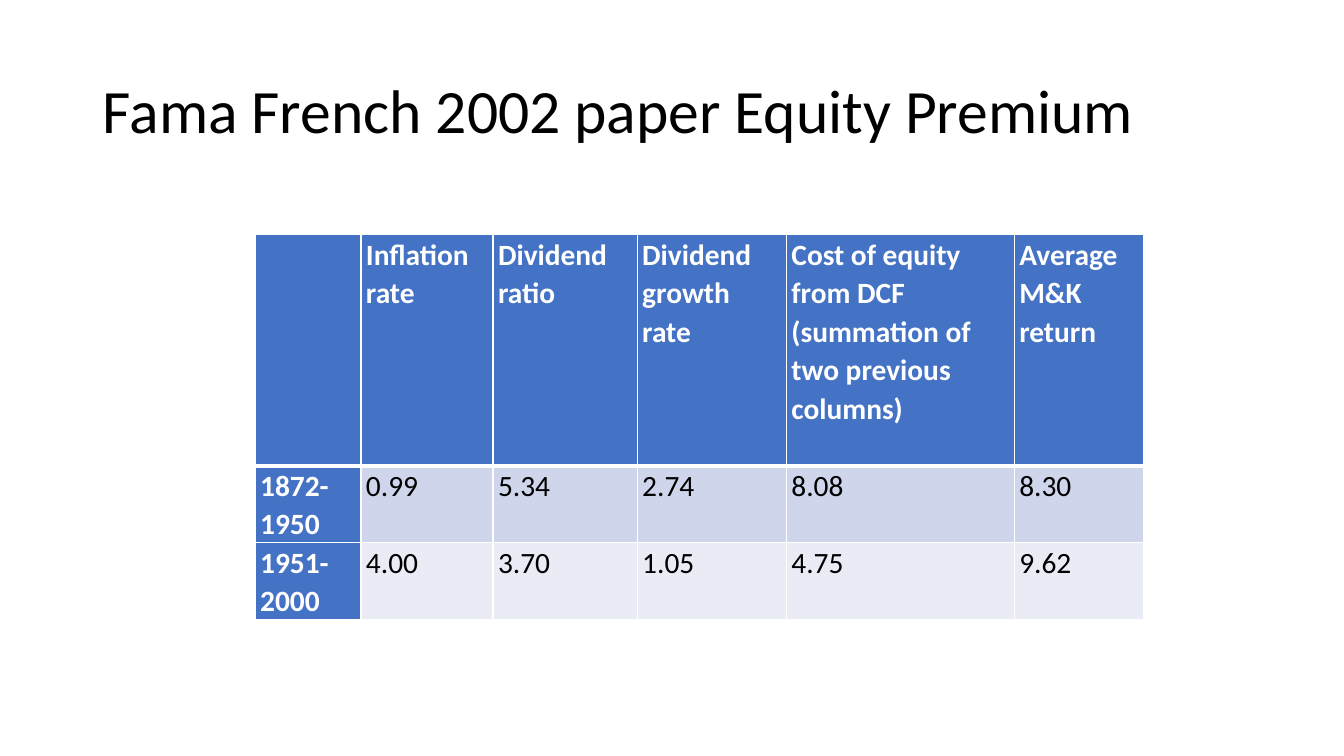
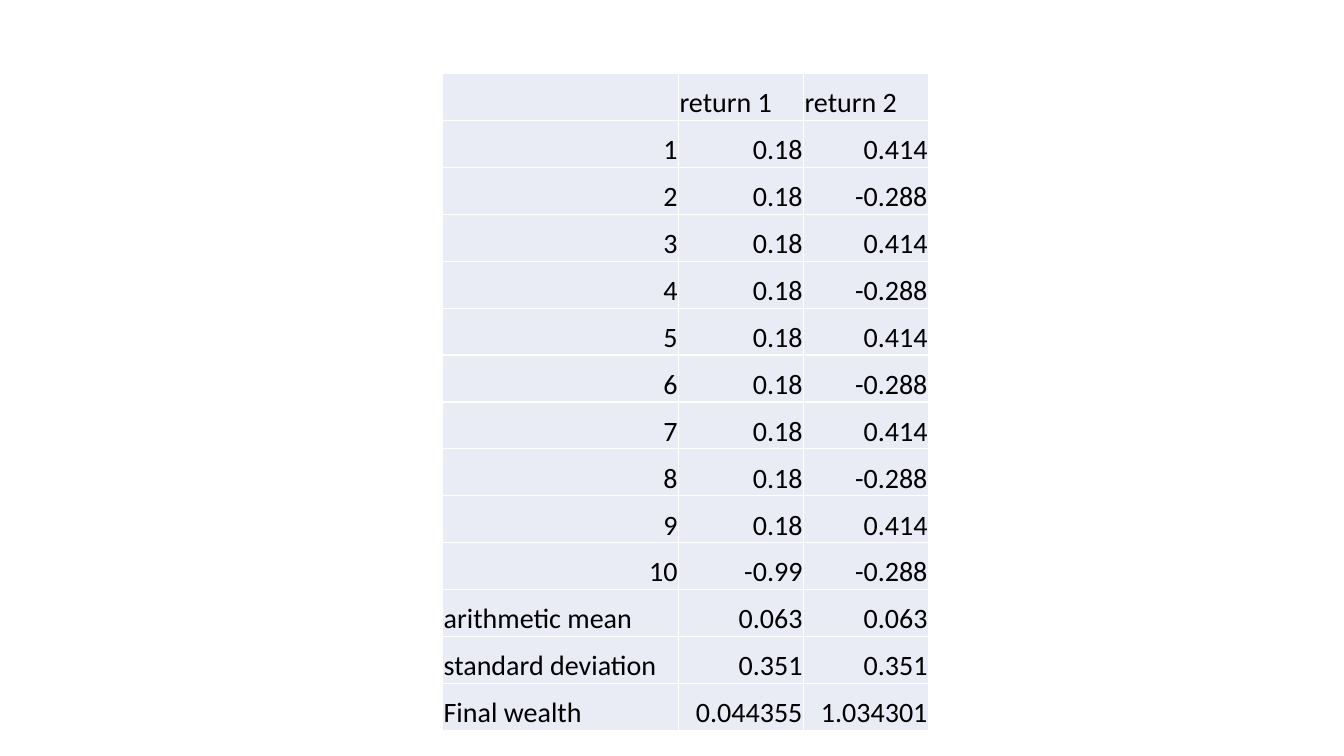
from lxml import etree
from pptx import Presentation
from pptx.dml.color import RGBColor
from pptx.enum.text import MSO_ANCHOR as Anchor, PP_ALIGN as Align
from pptx.oxml.ns import qn
from pptx.util import Inches, Pt

# Shared style
FONT = "Calibri"
BLACK, WHITE = "000000", "FFFFFF"
BLUE, BAND_DARK, BAND_LIGHT = "4472C4", "CFD5EA", "E9EBF5"
TITLE_ONLY, BLANK = 5, 6

PREMIUM_ROWS = [
    ["", "Inflation rate", "Dividend ratio", "Dividend growth rate",
     "Cost of equity from DCF (summation of two previous columns)",
     "Average M&K return"],
    ["1872-1950", "0.99", "5.34", "2.74", "8.08", "8.30"],
    ["1951-2000", "4.00", "3.70", "1.05", "4.75", "9.62"],
]
RETURN_ROWS = [
    ["", "return 1", "return 2"],
    *[[str(year), "0.18" if year < 10 else "-0.99",
       "0.414" if year % 2 else "-0.288"] for year in range(1, 11)],
    ["arithmetic mean", "0.063", "0.063"],
    ["standard deviation", "0.351", "0.351"],
    ["Final wealth", "0.044355", "1.034301"],
]


def color(value):
    return RGBColor.from_string(value)


def style_font(paragraph, size, font_color, bold=False):
    font = paragraph.font
    font.name, font.size, font.bold = FONT, Pt(size), bold
    font.color.rgb = color(font_color)


def set_borders(cell, top=1, bottom=1):
    """Draw white cell borders with the given widths in points."""
    properties = cell._tc.get_or_add_tcPr()
    for side, width in (("L", 1), ("R", 1), ("T", top), ("B", bottom)):
        line = etree.SubElement(properties, qn(f"a:ln{side}"), w=str(Pt(width)))
        fill = etree.SubElement(line, qn("a:solidFill"))
        etree.SubElement(fill, qn("a:srgbClr"), val=WHITE)


def set_margins(cell, left, top, right, bottom):
    cell.margin_left, cell.margin_top = Inches(left), Inches(top)
    cell.margin_right, cell.margin_bottom = Inches(right), Inches(bottom)


def add_title(slide, text, left, top, width, height):
    title = slide.shapes.title
    title.left, title.top = Inches(left), Inches(top)
    title.width, title.height = Inches(width), Inches(height)
    title.text_frame.vertical_anchor = Anchor.MIDDLE
    paragraph = title.text_frame.paragraphs[0]
    paragraph.text = text
    paragraph.alignment = Align.LEFT
    paragraph.line_spacing = 0.9
    style_font(paragraph, 44, BLACK)


def add_table(slide, rows, left, top, widths, heights, style_cell):
    """Place a table and let style_cell format each of its cells."""
    frame = slide.shapes.add_table(
        len(rows), len(widths), Inches(left), Inches(top),
        Inches(sum(widths)), Inches(sum(heights)))
    table = frame.table
    table.first_row = table.horz_banding = False
    for column, width in zip(table.columns, widths):
        column.width = Inches(width)
    for row, height in zip(table.rows, heights):
        row.height = Inches(height)
    for row_index, texts in enumerate(rows):
        for column_index, text in enumerate(texts):
            cell = table.cell(row_index, column_index)
            cell.text = text
            style_cell(cell, row_index, column_index)


def style_premium_cell(cell, row, column):
    is_header = row == 0 or column == 0
    set_borders(cell, top=3 if row == 1 else 1, bottom=3 if row == 0 else 1)
    cell.fill.solid()
    band = BAND_DARK if row % 2 else BAND_LIGHT
    cell.fill.fore_color.rgb = color(BLUE if is_header else band)
    set_margins(cell, 0.05, 0, 0.05, 0)
    paragraph = cell.text_frame.paragraphs[0]
    paragraph.line_spacing = 1.07
    style_font(paragraph, 21, WHITE if is_header else BLACK, is_header)


def style_return_cell(cell, row, column):
    set_borders(cell)
    cell.fill.solid()
    cell.fill.fore_color.rgb = color(BAND_LIGHT)
    set_margins(cell, 0.01, 0.01, 0.01, 0)
    cell.vertical_anchor = Anchor.BOTTOM
    paragraph = cell.text_frame.paragraphs[0]
    is_label = cell.text[:1].isalpha()
    paragraph.alignment = Align.LEFT if is_label else Align.RIGHT
    style_font(paragraph, 20, BLACK)


def build_premium_slide(presentation):
    slide = presentation.slides.add_slide(presentation.slide_layouts[TITLE_ONLY])
    add_title(slide, "Fama French 2002 paper Equity Premium",
              0.92, 0.4, 11.5, 1.45)
    add_table(slide, PREMIUM_ROWS, 2.53, 2.33,
              [1.05, 1.31, 1.43, 1.48, 2.26, 1.28], [2.29, 0.74, 0.74],
              style_premium_cell)


def build_returns_slide(presentation):
    slide = presentation.slides.add_slide(presentation.slide_layouts[BLANK])
    add_table(slide, RETURN_ROWS, 4.39, 0.73, [2.34, 1.24, 1.24],
              [6.52 / len(RETURN_ROWS)] * len(RETURN_ROWS), style_return_cell)


def main():
    presentation = Presentation()
    presentation.slide_width = Inches(13.33)
    presentation.slide_height = Inches(7.5)
    build_premium_slide(presentation)
    build_returns_slide(presentation)
    presentation.save("out.pptx")


if __name__ == "__main__":
    main()
